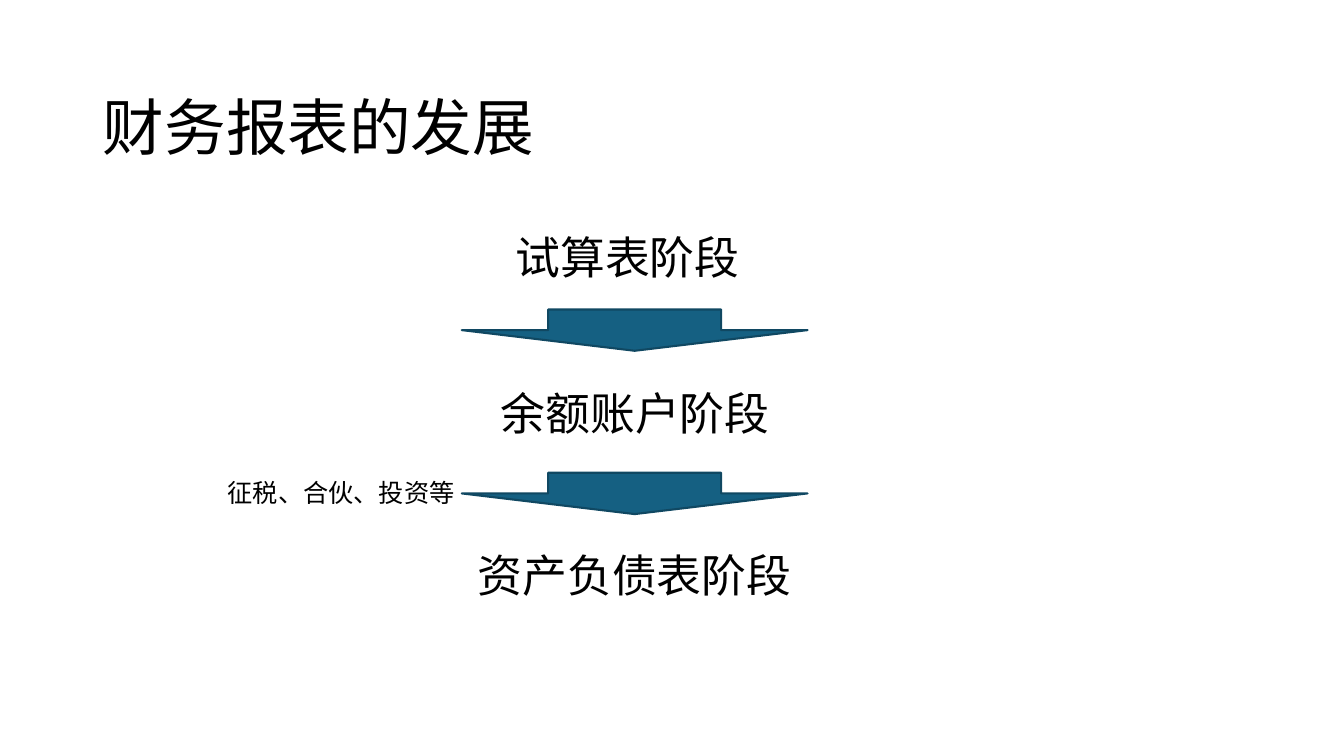
from lxml import etree
from pptx import Presentation
from pptx.dml.color import RGBColor
from pptx.enum import shapes, text
from pptx.oxml.ns import qn
from pptx.util import Inches, Pt

# Content: stages with left, top and width; arrows by top
TITLE = "财务报表的发展"
STAGES = [
    ("试算表阶段", 4.26, 2.23, 3.93),
    ("余额账户阶段", 4.46, 3.78, 3.68),
    ("资产负债表阶段", 3.68, 5.38, 5.23),
]
ARROW_TOPS = [3.07, 4.69]
CAUSE = "征税、合伙、投资等"

FONT = "Noto Sans CJK SC"
BLACK = RGBColor(0x00, 0x00, 0x00)
TEAL = RGBColor(0x15, 0x60, 0x82)
DARK_TEAL = RGBColor(0x10, 0x48, 0x62)


def write(box, words, size, align=text.PP_ALIGN.LEFT, anchor=text.MSO_ANCHOR.TOP,
          fit=text.MSO_AUTO_SIZE.SHAPE_TO_FIT_TEXT, spacing=1.0):
    frame = box.text_frame
    frame.word_wrap = True
    frame.auto_size = fit
    frame.vertical_anchor = anchor
    para = frame.paragraphs[0]
    para.alignment = align
    para.line_spacing = spacing
    span = para.add_run()
    span.text = words
    span.font.size = Pt(size)
    span.font.name = FONT
    span.font.color.rgb = BLACK
    # Chinese characters take the East Asian typeface
    etree.SubElement(span.font._element, qn("a:ea"), typeface=FONT)


def place(left, top, width, height):
    return [Inches(length) for length in (left, top, width, height)]


deck = Presentation()
deck.slide_width, deck.slide_height = Inches(13.33), Inches(7.5)
page = deck.slides.add_slide(deck.slide_layouts.get_by_name("Title Only"))

# Title
title = page.shapes.title
title.left, title.top, title.width, title.height = place(0.92, 0.57, 11.5, 1.45)
write(title, TITLE, 44, anchor=text.MSO_ANCHOR.MIDDLE,
      fit=text.MSO_AUTO_SIZE.NONE, spacing=0.9)

# Stages
for words, left, top, width in STAGES:
    box = page.shapes.add_textbox(*place(left, top, width, 0.64))
    write(box, words, 32, align=text.PP_ALIGN.CENTER)

# Arrows between the stages
for top in ARROW_TOPS:
    arrow = page.shapes.add_shape(shapes.MSO_SHAPE.DOWN_ARROW,
                                  *place(4.58, top, 3.43, 0.41))
    arrow.shadow.inherit = False
    arrow.fill.solid()
    arrow.fill.fore_color.rgb = TEAL
    arrow.line.color.rgb = DARK_TEAL
    arrow.line.width = Pt(1.5)

# What drove the last step
cause = page.shapes.add_textbox(*place(2.16, ARROW_TOPS[-1], 3.88, 0.4))
write(cause, CAUSE, 18)

deck.save("out.pptx")
